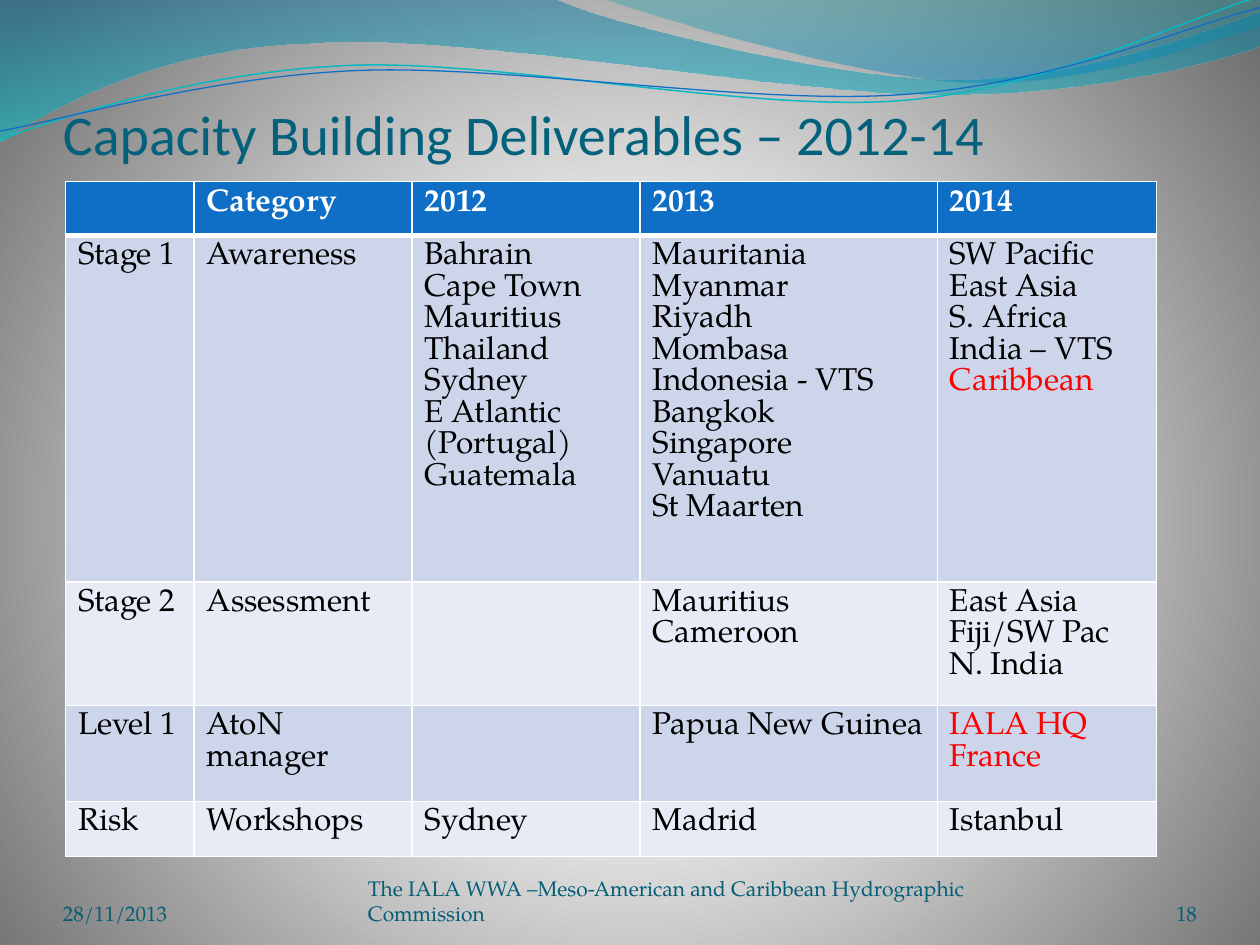
import math
from dataclasses import dataclass
from lxml import etree
from pptx import Presentation, util as u
from pptx.dml.color import RGBColor
from pptx.enum import text
from pptx.oxml import parse_xml
from pptx.oxml.ns import nsdecls, qn

TITLE = "Capacity Building Deliverables – 2012-14"
ROWS = [
    [[], ["Category"], ["2012"], ["2013"], ["2014"]],
    [["Stage 1"], ["Awareness"],
     ["Bahrain", "Cape Town", "Mauritius", "Thailand", "Sydney", "E Atlantic",
      "(Portugal)", "Guatemala"],
     ["Mauritania", "Myanmar", "Riyadh", "Mombasa", "Indonesia - VTS", "Bangkok",
      "Singapore", "Vanuatu", "St Maarten"],
     ["SW Pacific", "East Asia", "S. Africa", "India – VTS", "Caribbean"]],
    [["Stage 2"], ["Assessment"], [], ["Mauritius", "Cameroon"],
     ["East Asia", "Fiji/SW Pac", "N. India"]],
    [["Level 1"], ["AtoN manager"], [], ["Papua New Guinea"], ["IALA HQ", "France"]],
    [["Risk"], ["Workshops"], ["Sydney"], ["Madrid"], ["Istanbul"]],
]
HIGHLIGHTS = {"Caribbean", "IALA HQ", "France"}
COLS = [1.02, 1.73, 1.81, 2.36, 1.74]
HEIGHTS = [0.43, 2.75, 0.98, 0.76, 0.44]
FOOTERS = [
    ("28/11/2013", 0.5, 2.33, text.PP_ALIGN.LEFT),
    ("The IALA WWA –Meso-American and Caribbean Hydrographic Commission",
     2.92, 5.63, text.PP_ALIGN.LEFT),
    ("18", 8.67, 0.83, text.PP_ALIGN.RIGHT),
]


@dataclass(frozen=True)
class Theme:
    body: str = "TeX Gyre Pagella"
    heading: str = "Calibri"
    title_size: int = 32
    cell_size: int = 18
    footer_size: int = 12
    title: str = "04617B"
    footer: str = "045D75"
    header: str = "0F6FC6"
    bands: tuple = ("E7EBF5", "CCD5EA")
    ink: str = "000000"
    white: str = "FFFFFF"
    accent: str = "FF0000"
    teal: str = "0AB8BF"
    backdrop: tuple = ((0, "FFFFFF", 100), (25, "FFFFFF", 100), (100, "707070", 100))
    left_wave: tuple = ((0, "0074A1", 45), (100, "00C6CF", 55))
    right_wave: tuple = ((0, "00A1A9", 30), (80, "008BBF", 45))


T = Theme()
DOWN = '<a:lin ang="5400000" scaled="1"/>'
RADIAL = ('<a:path path="circle"><a:fillToRect l="10000" t="110000" '
          'r="10000" b="100000"/></a:path>')
TILT = 357.3

WAVES = [
    (T.left_wave, (-0.01, -0.01, 10.02, 1.14), [
        (0, 0), (4.4, -0.01), (4.76, 0.17, 6.64, 0.63, 7.58, 0.63),
        (8.53, 0.63, 9.58, 0.26, 10, 0.09), (10.01, 0.36),
        (9.83, 0.44, 8.7, 0.76, 7.46, 0.75), (6.22, 0.75, 3.82, 0.28, 2.57, 0.34),
        (1.29, 0.36, 0.46, 0.83, -0.01, 1.13), (0, 0)]),
    (T.right_wave, (4.79, -0.01, 5.21, 0.7), [
        (4.79, -0.01), (5.09, 0.11, 6.82, 0.62, 7.69, 0.65),
        (8.56, 0.69, 9.61, 0.32, 10, 0.21), (10, 0), (4.79, -0.01)]),
]
STRANDS = [
    (T.teal, 0.85, (-0.02, 0.22, 10.02, 0.71), [
        (0, 1.11), (0.48, 0.93, 1.58, 0.57, 2.77, 0.52),
        (3.95, 0.47, 5.93, 0.89, 7.13, 0.8), (8.33, 0.71, 9.38, 0.15, 9.98, -0.02)]),
    (T.header, 0.75, (-0.02, 0.3, 10.03, 0.58), [
        (0, 1.04), (0.47, 0.96, 1.64, 0.61, 2.83, 0.56),
        (4.03, 0.51, 5.97, 0.84, 7.17, 0.75), (8.36, 0.67, 9.41, 0.21, 10, 0.06)]),
]


def rgb(value):
    return RGBColor.from_string(value)


def set_gradient(parent, stops, direction):
    marks = "".join(
        f'<a:gs pos="{pos * 1000}"><a:srgbClr val="{color}">'
        f'<a:alpha val="{alpha * 1000}"/></a:srgbClr></a:gs>'
        for pos, color, alpha in stops)
    grad = parse_xml(f'<a:gradFill {nsdecls("a")} rotWithShape="1">'
                     f'<a:gsLst>{marks}</a:gsLst>{direction}</a:gradFill>')
    parent.replace(parent.find(qn("a:gradFill")), grad)


def add_curve(s, box, segments, rotation=0, close=False):
    left, top, width, height = box
    builder = s.shapes.build_freeform(u.Inches(left), u.Inches(top))
    builder.add_line_segments([(u.Inches(left + width), u.Inches(top + height))], False)
    sp = builder.convert_to_shape()
    sp.shadow.inherit = False
    sp.rotation = rotation
    cos, sin = math.cos(math.radians(-rotation)), math.sin(math.radians(-rotation))
    outline = sp._element.find(".//" + qn("a:path"))
    for child in list(outline):
        outline.remove(child)
    for i, seg in enumerate(segments):
        tag = "moveTo" if i == 0 else "lnTo" if len(seg) == 2 else "cubicBezTo"
        step = etree.SubElement(outline, qn("a:" + tag))
        for x, y in zip(seg[::2], seg[1::2]):
            dx, dy = x - left - width / 2, y - top - height / 2
            pt = etree.SubElement(step, qn("a:pt"))
            pt.set("x", str(u.Inches(width / 2 + dx * cos - dy * sin)))
            pt.set("y", str(u.Inches(height / 2 + dx * sin + dy * cos)))
    if close:
        etree.SubElement(outline, qn("a:close"))
    return sp


def style(p, font, size, color, bold=False):
    for r in p.runs:
        r.font.name, r.font.size, r.font.bold = font, u.Pt(size), bold
        r.font.color.rgb = rgb(color)


def add_text(s, words, box, font, size, color, align=text.PP_ALIGN.LEFT):
    tf = s.shapes.add_textbox(*map(u.Inches, box)).text_frame
    tf.word_wrap = True
    tf.vertical_anchor = text.MSO_ANCHOR.BOTTOM
    tf.margin_left = tf.margin_right = tf.margin_top = tf.margin_bottom = 0
    tf.text = words
    tf.paragraphs[0].alignment = align
    style(tf.paragraphs[0], font, size, color)


def set_borders(cell, bottom):
    tc_pr = cell._tc.get_or_add_tcPr()
    for i, (side, width) in enumerate(zip("LRTB", (1, 1, 1, bottom))):
        tc_pr.insert(i, parse_xml(
            f'<a:ln{side} {nsdecls("a")} w="{u.Pt(width)}"><a:solidFill>'
            f'<a:srgbClr val="{T.white}"/></a:solidFill></a:ln{side}>'))


def fill_cell(cell, lines, row):
    header = row == 0
    cell.fill.solid()
    cell.fill.fore_color.rgb = rgb(T.header if header else T.bands[row % 2])
    set_borders(cell, 3 if header else 1)
    cell.text_frame.text = "\n".join(lines)
    for p in cell.text_frame.paragraphs:
        p.line_spacing = u.Pt(T.cell_size)
        color = T.white if header else T.accent if p.text in HIGHLIGHTS else T.ink
        style(p, T.body, T.cell_size, color, header)


def add_deliverables(s):
    frame = s.shapes.add_table(len(ROWS), len(COLS), u.Inches(0.52), u.Inches(1.44),
                               u.Inches(sum(COLS)), u.Inches(sum(HEIGHTS)))
    table = frame.table
    for column, width in zip(table.columns, COLS):
        column.width = u.Inches(width)
    for i, (cells, height) in enumerate(zip(ROWS, HEIGHTS)):
        table.rows[i].height = u.Inches(height)
        for j, lines in enumerate(cells):
            fill_cell(table.cell(i, j), lines, i)


def main():
    prs = Presentation()
    prs.slide_width, prs.slide_height = u.Inches(10), u.Inches(7.5)
    s = prs.slides.add_slide(prs.slide_layouts[6])
    s.background.fill.gradient()
    set_gradient(s._element.find(".//" + qn("p:bgPr")), T.backdrop, RADIAL)
    for stops, box, segments in WAVES:
        sp = add_curve(s, box, segments, close=True)
        sp.fill.gradient()
        set_gradient(sp._element.spPr, stops, DOWN)
        sp.line.fill.background()
    for color, width, box, segments in STRANDS:
        sp = add_curve(s, box, segments, TILT)
        sp.fill.background()
        sp.line.color.rgb = rgb(color)
        sp.line.width = u.Pt(width)
    add_text(s, TITLE, (0.5, 0.54, 9, 0.78), T.heading, T.title_size, T.title)
    add_deliverables(s)
    for words, left, width, align in FOOTERS:
        add_text(s, words, (left, 6.95, width, 0.4), T.body, T.footer_size,
                 T.footer, align)
    prs.save("out.pptx")


if __name__ == "__main__":
    main()
